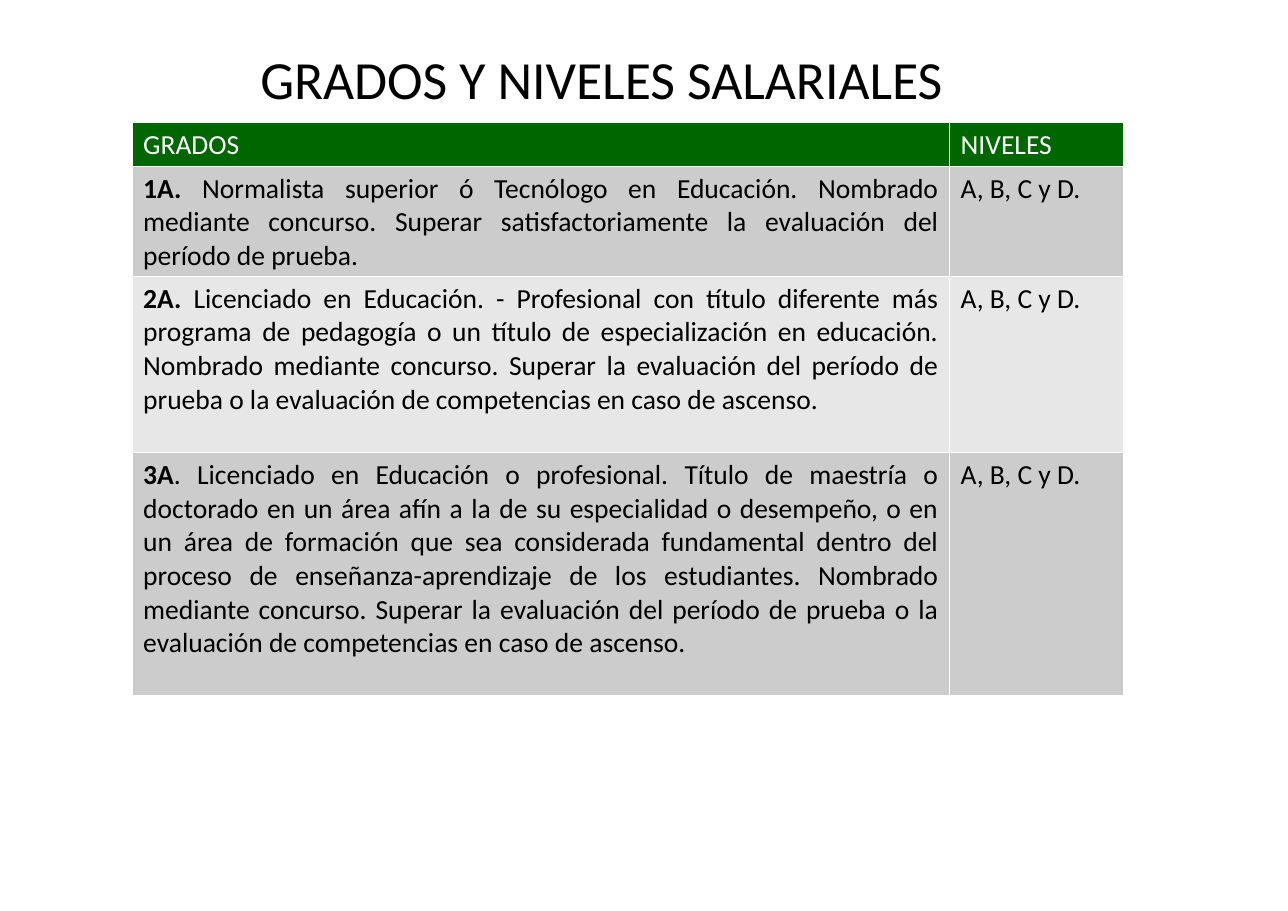
from dataclasses import dataclass

from lxml import etree
from pptx import Presentation
from pptx.dml.color import RGBColor
from pptx.enum.text import MSO_ANCHOR, PP_ALIGN
from pptx.oxml.ns import qn
from pptx.slide import Slide
from pptx.table import _Cell
from pptx.text.text import _Paragraph
from pptx.util import Inches, Pt

CENTER = PP_ALIGN.CENTER
JUSTIFY = PP_ALIGN.JUSTIFY
LEFT = PP_ALIGN.LEFT
MIDDLE = MSO_ANCHOR.MIDDLE

BLACK = RGBColor(0x00, 0x00, 0x00)
WHITE = RGBColor(0xFF, 0xFF, 0xFF)
GREEN = RGBColor(0x00, 0x66, 0x00)
GRAY = RGBColor(0xCC, 0xCC, 0xCC)
LIGHT_GRAY = RGBColor(0xE7, 0xE7, 0xE7)

FONT = "Calibri"
TITLE_SIZE = 35.1
TABLE_SIZE = 18
COLUMN_WIDTHS = (7.42, 1.58)
BORDER_SIDES = ("a:lnL", "a:lnR", "a:lnT", "a:lnB")
LEVELS = "A, B, C y D."


@dataclass(frozen=True)
class GradeRow:
    label: str
    requirements: str
    levels: str
    height: float
    fill: RGBColor
    color: RGBColor = BLACK
    alignment: PP_ALIGN = JUSTIFY


ROWS = (
    GradeRow("", "GRADOS", "NIVELES", 0.4, GREEN, WHITE, LEFT),
    GradeRow(
        "1A. ",
        "Normalista superior ó Tecnólogo en Educación. Nombrado mediante "
        "concurso. Superar satisfactoriamente la evaluación del período de "
        "prueba.",
        LEVELS, 1, GRAY,
    ),
    GradeRow(
        "2A. ",
        "Licenciado en Educación. - Profesional con título diferente más "
        "programa de pedagogía o un título de especialización en educación. "
        "Nombrado mediante concurso. Superar la evaluación del período de "
        "prueba o la evaluación de competencias en caso de ascenso.",
        LEVELS, 1.6, LIGHT_GRAY,
    ),
    GradeRow(
        "3A",
        ". Licenciado en Educación o profesional. Título de maestría o "
        "doctorado en un área afín a la de su especialidad o desempeño, o en "
        "un área de formación que sea considerada fundamental dentro del "
        "proceso de enseñanza-aprendizaje de los estudiantes. Nombrado "
        "mediante concurso. Superar la evaluación del período de prueba o la "
        "evaluación de competencias en caso de ascenso.",
        LEVELS, 2.2, GRAY,
    ),
)


def add_span(para: _Paragraph, text: str, size: float, color: RGBColor,
             bold: bool = False) -> None:
    span = para.add_run()
    span.text = text
    span.font.name = FONT
    span.font.size = Pt(size)
    span.font.bold = bold
    span.font.color.rgb = color


def style_cell(cell: _Cell, fill: RGBColor) -> None:
    properties = cell._tc.get_or_add_tcPr()
    for side in BORDER_SIDES:
        line = etree.SubElement(properties, qn(side), w=str(Pt(1)))
        solid = etree.SubElement(line, qn("a:solidFill"))
        etree.SubElement(solid, qn("a:srgbClr"), val=str(WHITE))
    cell.fill.solid()
    cell.fill.fore_color.rgb = fill


def add_title(page: Slide) -> None:
    box = page.shapes.add_textbox(
        Inches(0.96), Inches(0.31), Inches(9), Inches(0.79))
    frame = box.text_frame
    frame.word_wrap = True
    frame.vertical_anchor = MIDDLE
    para = frame.paragraphs[0]
    para.alignment = CENTER
    add_span(para, "GRADOS Y NIVELES SALARIALES", TITLE_SIZE, BLACK)


def add_grades_table(page: Slide) -> None:
    table = page.shapes.add_table(
        len(ROWS), len(COLUMN_WIDTHS), Inches(1.2), Inches(1.11),
        Inches(sum(COLUMN_WIDTHS)),
        Inches(sum(row.height for row in ROWS))).table
    for column, width in zip(table.columns, COLUMN_WIDTHS):
        column.width = Inches(width)
    for index, row in enumerate(ROWS):
        table.rows[index].height = Inches(row.height)
        grade, levels = table.rows[index].cells
        style_cell(grade, row.fill)
        style_cell(levels, row.fill)
        para = grade.text_frame.paragraphs[0]
        para.alignment = row.alignment
        if row.label:
            add_span(para, row.label, TABLE_SIZE, row.color, bold=True)
        add_span(para, row.requirements, TABLE_SIZE, row.color)
        add_span(levels.text_frame.paragraphs[0], row.levels, TABLE_SIZE,
                 row.color)


def main() -> None:
    deck = Presentation()
    deck.slide_width = Inches(11.69)
    deck.slide_height = Inches(8.27)
    page = deck.slides.add_slide(deck.slide_layouts[6])
    add_title(page)
    add_grades_table(page)
    deck.save("out.pptx")


if __name__ == "__main__":
    main()
